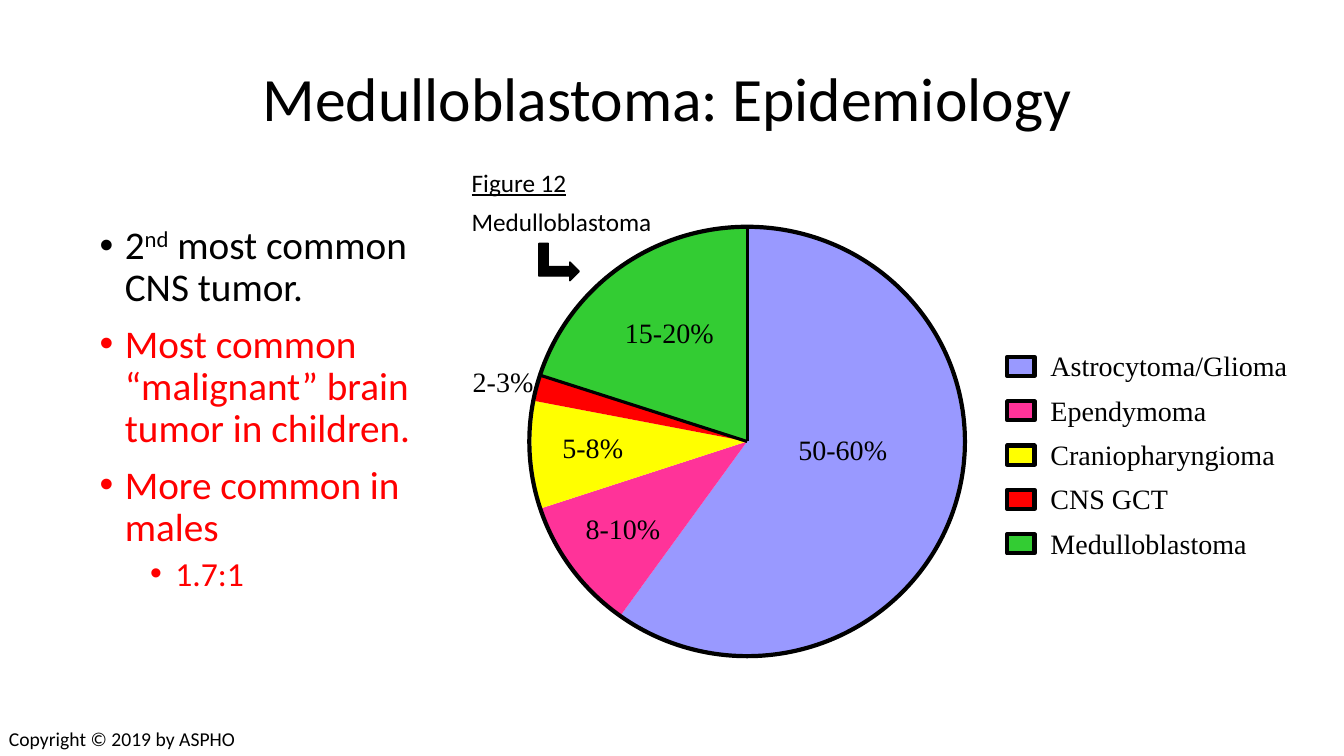
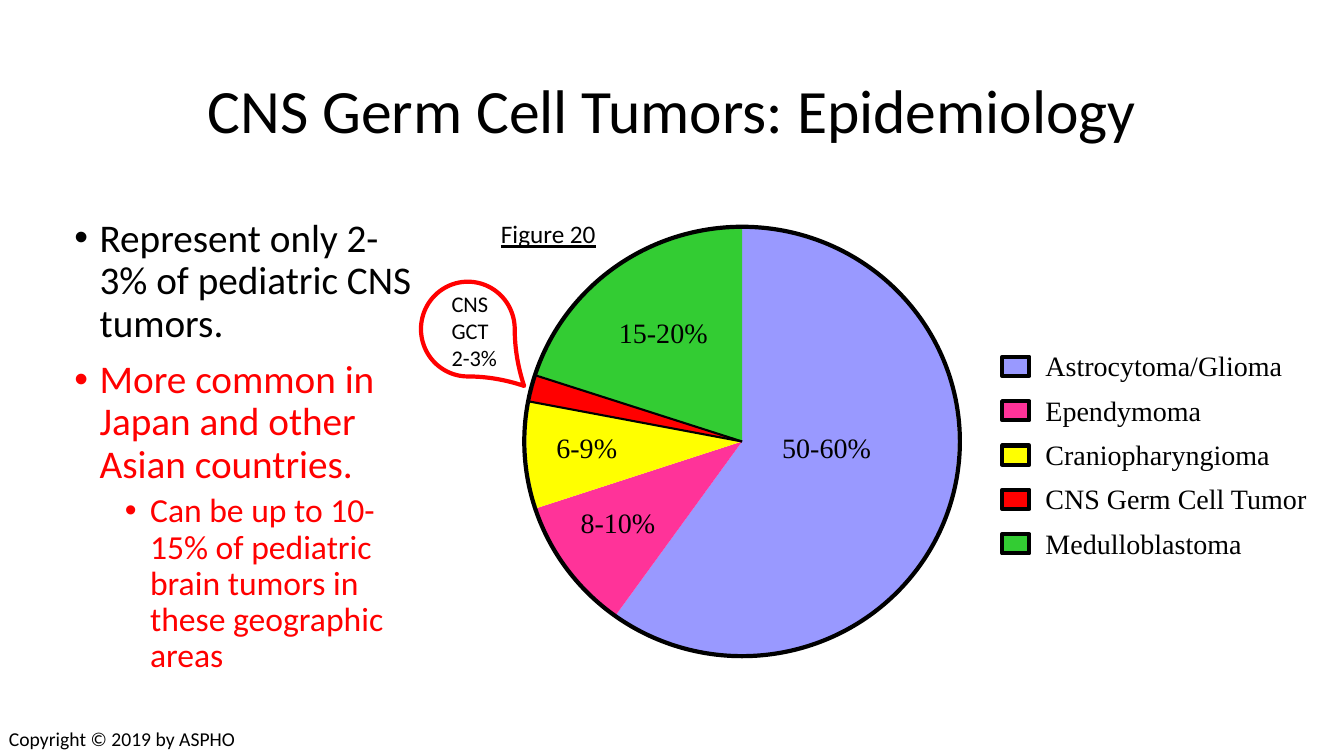
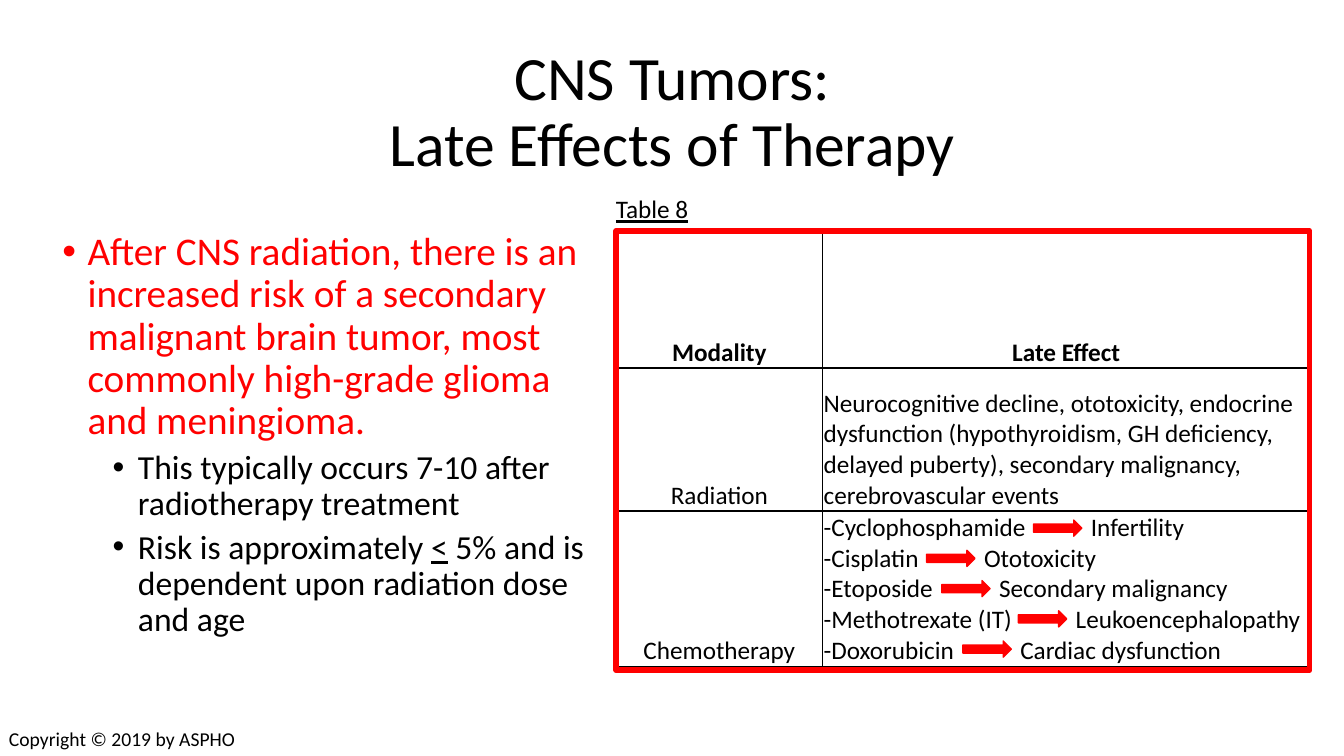
import math
import pptx
import pptx.chart.data
import pptx.dml.color
import pptx.enum.chart
import pptx.enum.shapes
import pptx.enum.text
import pptx.oxml
import pptx.oxml.ns
import pptx.util
from lxml import etree

Inches = pptx.util.Inches
Pt = pptx.util.Pt
RGB = pptx.dml.color.RGBColor
SHAPE = pptx.enum.shapes.MSO_SHAPE
ALIGN = pptx.enum.text.PP_ALIGN
ANCHOR = pptx.enum.text.MSO_ANCHOR
qn = pptx.oxml.ns.qn

BLACK = RGB(0x00, 0x00, 0x00)
RED = RGB(0xFF, 0x00, 0x00)
BLUE = RGB(0x99, 0x99, 0xFF)
PINK = RGB(0xFF, 0x33, 0x99)
YELLOW = RGB(0xFF, 0xFF, 0x00)
GREEN = RGB(0x33, 0xCC, 0x33)
SANS, SERIF = "Calibri", "Times New Roman"

COPYRIGHT = "Copyright © 2019 by ASPHO"
SLICES = [("Astrocytoma/Glioma", 60, BLUE), ("Ependymoma", 10, PINK),
          ("Craniopharyngioma", 8, YELLOW), ("CNS GCT", 2, RED),
          ("Medulloblastoma", 20, GREEN)]

# Body items: level, colour, pieces of text with an optional style
MEDULLO = {
    "title": "Medulloblastoma: Epidemiology",
    "title_at": (0.87, 0.28),
    "body_at": (0.89, 2.19, 3.85, 4.76),
    "body": [
        (0, BLACK, [("2", ""), ("nd", "super"), (" most common CNS tumor.", "")]),
        (0, RED, [("Most common “malignant” brain tumor in children.", "")]),
        (0, RED, [("More common in males", "")]),
        (1, RED, [("1.7:1", "")]),
    ],
    "caption": ("Figure 12", 4.58, 1.61),
    "pie_left": 5.25,
    "names": {},
    "labels": [("50-60%", 7.82, 4.24), ("15-20%", 6.1, 3.08), ("8-10%", 5.71, 5.03),
               ("5-8%", 5.48, 4.22), ("2-3%", 4.59, 3.57)],
    "edges": (80, 100),
    "edge_width": 2.25,
}
GERM = {
    "title": "CNS Germ Cell Tumors: Epidemiology",
    "title_at": (0.92, 0.4),
    "body_at": (0.64, 2.12, 3.65, 4.76),
    "body": [
        (0, BLACK, [("Represent only 2-3% of pediatric CNS tumors.", "")]),
        (0, RED, [("More common in Japan and other Asian countries.", "")]),
        (1, RED, [("Can be up to 10-15% of pediatric brain tumors "
                   "in these geographic areas", "")]),
    ],
    "caption": ("Figure 20", 4.87, 2.12),
    "pie_left": 5.2,
    "names": {"CNS GCT": "CNS Germ Cell Tumor"},
    "labels": [("50-60%", 7.66, 4.22), ("15-20%", 6.04, 3.08), ("8-10%", 5.66, 4.97),
               ("6-9%", 5.42, 4.22)],
    "edges": (78, 80),
    "edge_width": 1.5,
}
LATE = {
    "title": "CNS Tumors:\nLate Effects of Therapy",
    "title_at": (0.92, 0.4),
    "body_at": (0.52, 2.25, 5.67, 4.76),
    "body": [
        (0, RED, [("After CNS radiation, there is an increased risk of a secondary "
                   "malignant brain tumor, most commonly high-grade glioma and "
                   "meningioma.", "")]),
        (1, BLACK, [("This typically occurs 7-10 after radiotherapy treatment", "")]),
        (1, BLACK, [("Risk is approximately ", ""), ("<", "under"),
                    (" 5% and is dependent upon radiation dose and age", "")]),
    ],
    "caption": ("Table 8", 6.01, 1.87),
}
# Drug, effect, left edge of the arrow between them
DRUGS = [("-Cyclophosphamide", "Infertility", 10.25),
         ("-Cisplatin", "Ototoxicity", 9.19),
         ("-Etoposide", "Secondary malignancy", 9.34),
         ("-Methotrexate (IT)", "Leukoencephalopathy", 10.1),
         ("-Doxorubicin", "Cardiac dysfunction", 9.55)]
ROWS = [("Modality", ["Late Effect"]),
        ("Radiation", ["Neurocognitive decline, ototoxicity, endocrine dysfunction "
                       "(hypothyroidism, GH deficiency, delayed puberty), secondary "
                       "malignancy, cerebrovascular events"]),
        ("Chemotherapy", [f"{drug}\t{effect}" for drug, effect, left in DRUGS])]
COLS, HEIGHTS = (2.05, 4.83), (1.36, 1.42, 1.54)
TABLE_LEFT, TABLE_TOP = 6.11, 2.29
FRAME_ROOM = 0.04
INSET = 0.01

PIE_TOP, PIE_W, PIE_H = 2.25, 4.32, 4.26
PIE_SIZE, PLOT = 4.28, 0.9


def box(at):
    return [Inches(n) for n in at]


def style(para, size, color=BLACK, face=SANS, bold=False, under=False):
    font = para.font
    font.size, font.name, font.bold = Pt(size), face, bold
    font.color.rgb = color
    if under:
        font.underline = True


def add_text(slide, at, lines, size, **look):
    frame = slide.shapes.add_textbox(*box(at)).text_frame
    frame.word_wrap = True
    for i, line in enumerate(lines):
        para = frame.paragraphs[0] if i == 0 else frame.add_paragraph()
        para.text = line
        style(para, size, **look)


def add_shape(slide, kind, at, fill=None, line=BLACK, width=3.0):
    shape = slide.shapes.add_shape(kind, *box(at))
    shape.shadow.inherit = False
    if fill is None:
        shape.fill.background()
    else:
        shape.fill.solid()
        shape.fill.fore_color.rgb = fill
    shape.line.color.rgb = line
    shape.line.width = Pt(width)
    return shape


def add_body(slide, at, items):
    frame = slide.shapes.add_textbox(*box(at)).text_frame
    frame.word_wrap = True
    for i, (level, color, pieces) in enumerate(items):
        para = frame.paragraphs[0] if i == 0 else frame.add_paragraph()
        para.level = level
        props = para._p.get_or_add_pPr()
        props.set("marL", str(Inches((0.25, 0.75)[level])))
        props.set("indent", str(Inches(-0.25)))
        etree.SubElement(props, qn("a:buFont"), typeface="Arial")
        etree.SubElement(props, qn("a:buChar"), char="•")
        para.line_spacing = 0.9
        if i:
            para.space_before = Pt((10, 5)[level])
        style(para, (28, 24)[level], color)
        for text, mark in pieces:
            run = para.add_run()
            run.text = text
            if mark == "super":
                run.font._element.set("baseline", "30000")
            elif mark == "under":
                run.font.underline = True


def add_base(deck, data):
    """Add a slide with its title, body, caption and copyright line."""
    slide = deck.slides.add_slide(deck.slide_layouts[5])
    title = slide.shapes.title
    title.left, title.top, title.width, title.height = box((*data["title_at"], 11.5, 1.45))
    title.text_frame.vertical_anchor = ANCHOR.MIDDLE
    para = title.text_frame.paragraphs[0]
    para.text = data["title"]
    para.alignment, para.line_spacing = ALIGN.CENTER, 0.9
    style(para, 44)
    add_body(slide, data["body_at"], data["body"])
    name, left, top = data["caption"]
    add_text(slide, (left, top, 1.98, 0.4), [name], 18, under=True)
    add_text(slide, (-0.01, 7.16, 2.48, 0.34), [COPYRIGHT], 14)
    return slide


def add_pie(slide, mid_x, mid_y):
    data = pptx.chart.data.CategoryChartData()
    data.categories = [name for name, share, color in SLICES]
    data.add_series("Share", [share for name, share, color in SLICES])
    size = PIE_SIZE / PLOT
    at = (mid_x - size / 2, mid_y - size / 2, size, size)
    chart = slide.shapes.add_chart(pptx.enum.chart.XL_CHART_TYPE.PIE, *box(at), data).chart
    chart.has_legend = chart.has_title = False
    for i, (name, share, color) in enumerate(SLICES):
        form = chart.plots[0].series[0].points[i].format
        form.fill.solid()
        form.fill.fore_color.rgb = color
        form.line.fill.background()
    area = chart._chartSpace.find(".//" + qn("c:plotArea"))
    for old in area.findall(qn("c:layout")):
        area.remove(old)
    layout = etree.Element(qn("c:layout"))
    manual = etree.SubElement(layout, qn("c:manualLayout"))
    start = (1 - PLOT) / 2
    for tag, val in (("layoutTarget", "inner"), ("xMode", "edge"), ("yMode", "edge"),
                     ("x", start), ("y", start), ("w", PLOT), ("h", PLOT)):
        value = val if isinstance(val, str) else f"{val:.2f}"
        etree.SubElement(manual, qn("c:" + tag), val=value)
    area.insert(0, layout)


def add_edge(slide, mid_x, mid_y, share, width):
    """Draw the radius where the given percentage of the pie ends."""
    turn = 2 * math.pi * share / 100
    rim = (mid_x + PIE_W / 2 * math.sin(turn), mid_y - PIE_H / 2 * math.cos(turn))
    edge = slide.shapes.add_connector(pptx.enum.shapes.MSO_CONNECTOR.STRAIGHT,
                                      *box((mid_x, mid_y, *rim)))
    edge.line.color.rgb = BLACK
    edge.line.width = Pt(width)
    etree.SubElement(edge._element.spPr, qn("a:effectLst"))


def add_figure(deck, data):
    slide = add_base(deck, data)
    left = data["pie_left"]
    mid_x, mid_y = left + PIE_W / 2, PIE_TOP + PIE_H / 2
    add_pie(slide, mid_x, mid_y)
    add_shape(slide, SHAPE.OVAL, (left, PIE_TOP, PIE_W, PIE_H))
    for share in data["edges"]:
        add_edge(slide, mid_x, mid_y, share, data["edge_width"])
    for text, x, y in data["labels"]:
        add_text(slide, (x, y, 1.14, 0.44), [text], 20, face=SERIF)
    for i, (name, share, color) in enumerate(SLICES):
        x, y = left + 4.74, 3.54 + 0.44 * i
        add_shape(slide, SHAPE.RECTANGLE, (x, y, 0.27, 0.19), color)
        add_text(slide, (x + 0.33, y - 0.13, 2.99, 0.44),
                 [data["names"].get(name, name)], 20, face=SERIF)
    return slide


def set_borders(cell):
    props = cell._tc.get_or_add_tcPr()
    for side in "LRTB":
        line = etree.SubElement(props, qn("a:ln" + side), w=str(Pt(1)))
        fill = etree.SubElement(line, qn("a:solidFill"))
        etree.SubElement(fill, qn("a:srgbClr"), val=str(BLACK))


def fill_cell(cell, lines, bold, center, tabs=()):
    set_borders(cell)
    cell.fill.background()
    cell.margin_left = cell.margin_right = cell.margin_top = Inches(INSET)
    cell.margin_bottom = 0
    cell.vertical_anchor = ANCHOR.BOTTOM
    for i, line in enumerate(lines):
        para = cell.text_frame.paragraphs[0] if i == 0 else cell.text_frame.add_paragraph()
        para.text = line
        para.alignment = ALIGN.CENTER if center else ALIGN.LEFT
        if tabs:
            stops = etree.SubElement(para._p.get_or_add_pPr(), qn("a:tabLst"))
            etree.SubElement(stops, qn("a:tab"), pos=str(Inches(tabs[i])), algn="l")
        style(para, 18, bold=bold)


def add_effects(slide):
    at = (TABLE_LEFT, TABLE_TOP, sum(COLS), sum(HEIGHTS))
    table = slide.shapes.add_table(len(ROWS), len(COLS), *box(at)).table
    table.first_row = table.horz_banding = False
    for col, width in zip(table.columns, COLS):
        col.width = Inches(width)
    start = TABLE_LEFT + COLS[0] + INSET
    stops = [left + 0.57 - start for drug, effect, left in DRUGS]
    for i, (mode, lines) in enumerate(ROWS):
        table.rows[i].height = Inches(HEIGHTS[i])
        head = i == 0
        fill_cell(table.cell(i, 0), [mode], head, True)
        fill_cell(table.cell(i, 1), lines, head, head,
                  stops if len(lines) > 1 else ())
    add_shape(slide, SHAPE.RECTANGLE, (*at[:3], at[3] + FRAME_ROOM), line=RED, width=4)
    for i, (drug, effect, left) in enumerate(DRUGS):
        add_shape(slide, SHAPE.RIGHT_ARROW, (left, 5.16 + 0.3 * i, 0.48, 0.16),
                  RED, RED, 1)


def main():
    deck = pptx.Presentation()
    deck.slide_width, deck.slide_height = Inches(13.33), Inches(7.5)

    slide = add_figure(deck, MEDULLO)
    add_text(slide, (4.58, 2, 2.07, 0.4), ["Medulloblastoma"], 18)
    arrow = add_shape(slide, SHAPE.BENT_UP_ARROW, (5.36, 2.4, 0.37, 0.4), BLACK, width=1)
    arrow.rotation = 90

    slide = add_figure(deck, GERM)
    add_text(slide, (4.38, 2.83, 0.75, 0.91), ["CNS GCT", "2-3%"], 16)
    drop = add_shape(slide, SHAPE.TEAR, (4.17, 2.8, 0.94, 0.93), line=RED)
    drop.rotation = 90
    drop.adjustments[0] = 1.2

    add_effects(add_base(deck, LATE))
    deck.save("out.pptx")


if __name__ == "__main__":
    main()
